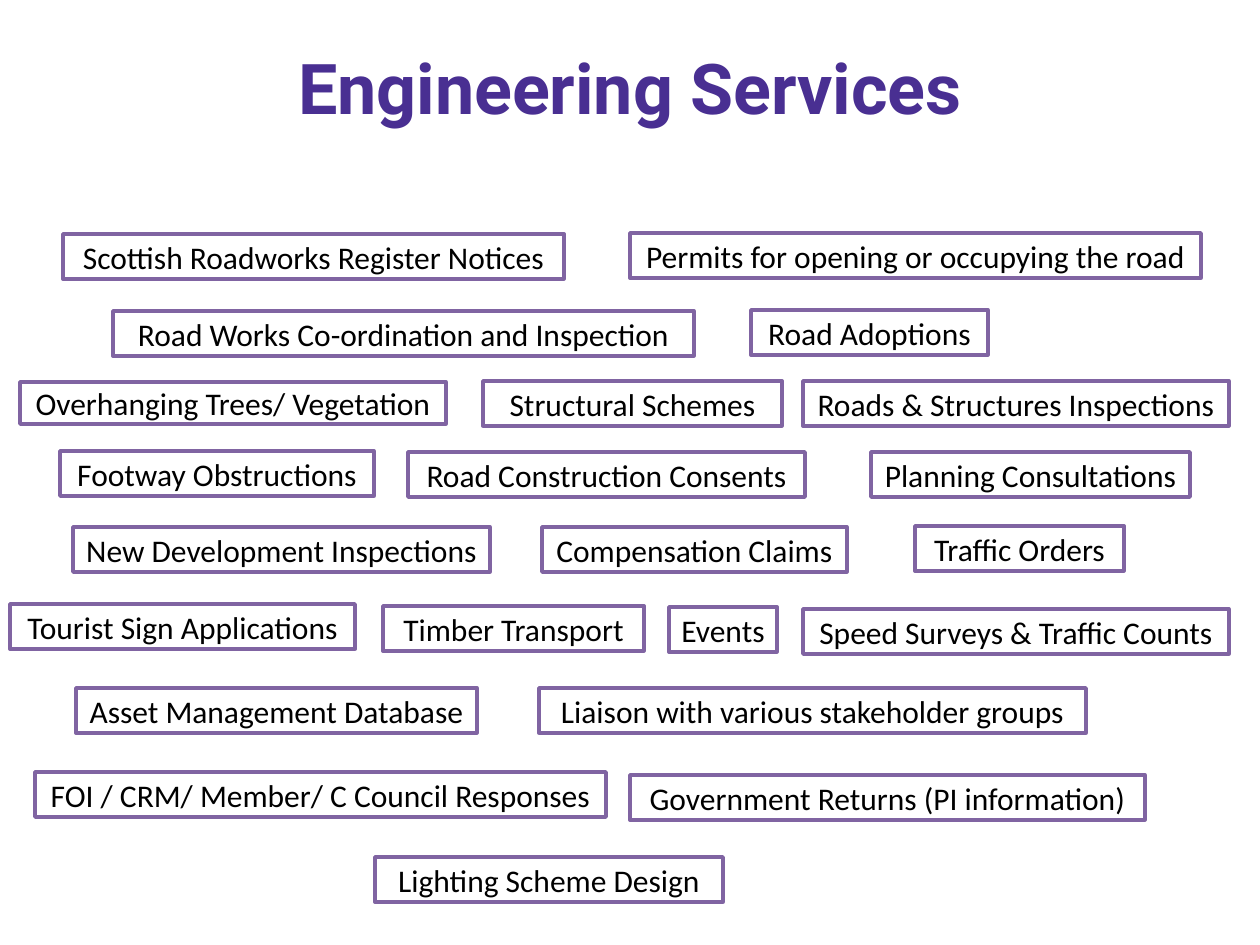
from typing import NamedTuple

import pptx
import pptx.dml.color
import pptx.enum.shapes
import pptx.enum.text
import pptx.shapes.autoshape
import pptx.slide
import pptx.util

PIXELS_PER_INCH = 126
TITLE_ONLY_LAYOUT = 5
BOX_HEIGHT = 45

WHITE = pptx.dml.color.RGBColor(0xFF, 0xFF, 0xFF)
BLACK = pptx.dml.color.RGBColor(0x00, 0x00, 0x00)
BORDER_PURPLE = pptx.dml.color.RGBColor(0x80, 0x64, 0xA2)
TITLE_PURPLE = pptx.dml.color.RGBColor(0x49, 0x2F, 0x92)


class Service(NamedTuple):
    label: str
    left: int
    top: int
    width: int
    height: int = BOX_HEIGHT


SERVICES = [
    Service("Scottish Roadworks Register Notices", 63, 234, 501),
    Service("Permits for opening or occupying the road", 630, 233, 571),
    Service("Road Works Co-ordination and Inspection", 113, 311, 581),
    Service("Road Adoptions", 751, 310, 237),
    Service("Overhanging Trees/ Vegetation", 20, 382, 426, 42),
    Service("Structural Schemes", 483, 381, 299),
    Service("Roads & Structures Inspections", 803, 381, 426),
    Service("Footway Obstructions", 60, 451, 314),
    Service("Road Construction Consents", 408, 452, 397),
    Service("Planning Consultations", 871, 452, 319),
    Service("New Development Inspections", 73, 527, 417),
    Service("Compensation Claims", 542, 527, 305),
    Service("Traffic Orders", 915, 526, 209),
    Service("Tourist Sign Applications", 10, 604, 345),
    Service("Timber Transport", 383, 606, 261),
    Service("Events", 669, 607, 108),
    Service("Speed Surveys & Traffic Counts", 803, 609, 426),
    Service("Asset Management Database", 76, 688, 401),
    Service("Liaison with various stakeholder groups", 539, 688, 547),
    Service("FOI / CRM/ Member/ C Council Responses", 35, 772, 571),
    Service("Government Returns (PI information)", 630, 775, 515),
    Service("Lighting Scheme Design", 375, 857, 348),
]


def px(length: int) -> pptx.util.Emu:
    return pptx.util.Emu(round(length * 914400 / PIXELS_PER_INCH))


def add_centred_text(
    shape: pptx.shapes.autoshape.Shape,
    text: str,
    font_name: str,
    size: int,
    color: pptx.dml.color.RGBColor,
    bold: bool = False,
) -> None:
    shape.text_frame.vertical_anchor = pptx.enum.text.MSO_ANCHOR.MIDDLE
    paragraph = shape.text_frame.paragraphs[0]
    paragraph.alignment = pptx.enum.text.PP_ALIGN.CENTER
    run = paragraph.add_run()
    run.text = text
    run.font.name = font_name
    run.font.size = pptx.util.Pt(size)
    run.font.bold = bold
    run.font.color.rgb = color


def format_title(slide: pptx.slide.Slide) -> None:
    title = slide.shapes.title
    title.left, title.top = px(63), px(38)
    title.width, title.height = px(1134), px(97)
    add_centred_text(title, "Engineering Services", "Roboto", 40, TITLE_PURPLE, bold=True)


def draw_service(slide: pptx.slide.Slide, service: Service) -> None:
    shape = slide.shapes.add_shape(
        pptx.enum.shapes.MSO_SHAPE.RECTANGLE,
        px(service.left),
        px(service.top),
        px(service.width),
        px(service.height),
    )
    shape.shadow.inherit = False
    shape.fill.solid()
    shape.fill.fore_color.rgb = WHITE
    shape.line.color.rgb = BORDER_PURPLE
    shape.line.width = pptx.util.Pt(2)
    shape.text_frame.word_wrap = False
    add_centred_text(shape, service.label, "Calibri", 18, BLACK)


def main() -> None:
    presentation = pptx.Presentation()
    presentation.slide_width = px(1260)
    presentation.slide_height = px(945)
    slide = presentation.slides.add_slide(presentation.slide_layouts[TITLE_ONLY_LAYOUT])
    format_title(slide)
    for service in SERVICES:
        draw_service(slide, service)
    presentation.save("out.pptx")


if __name__ == "__main__":
    main()
